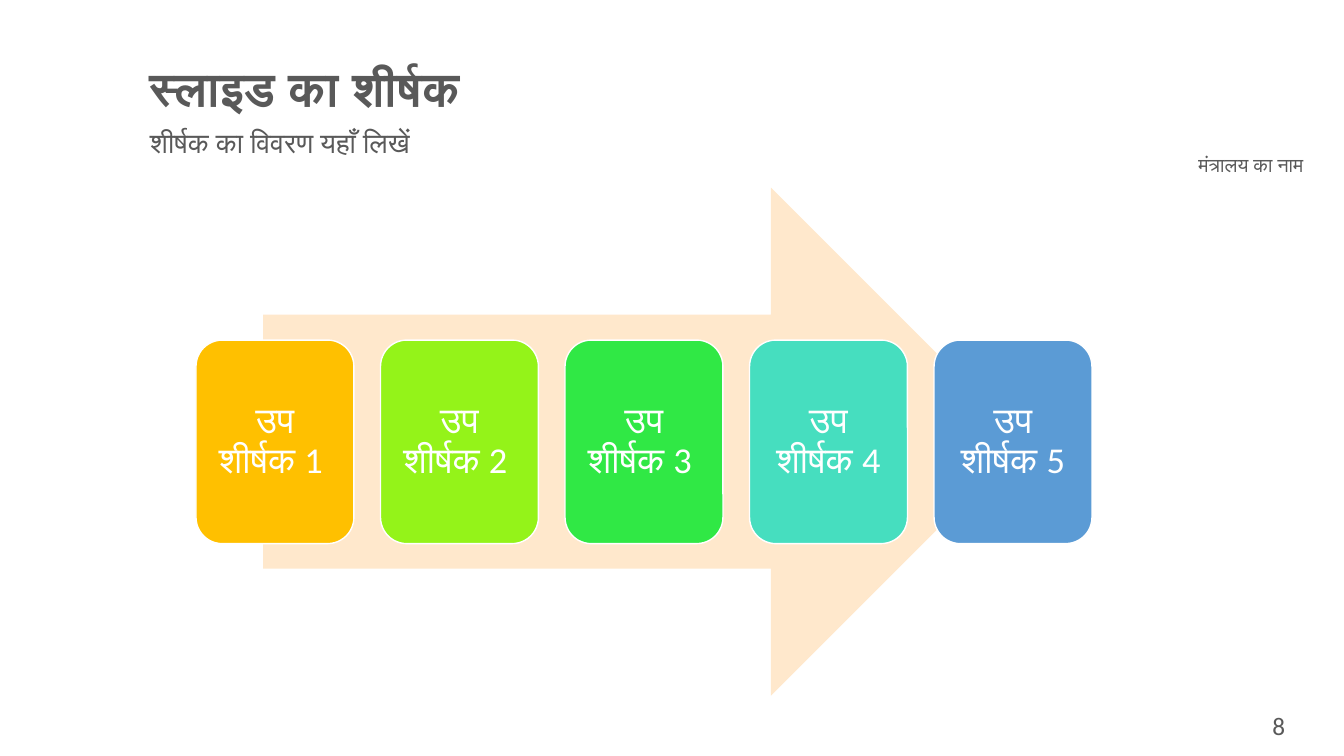
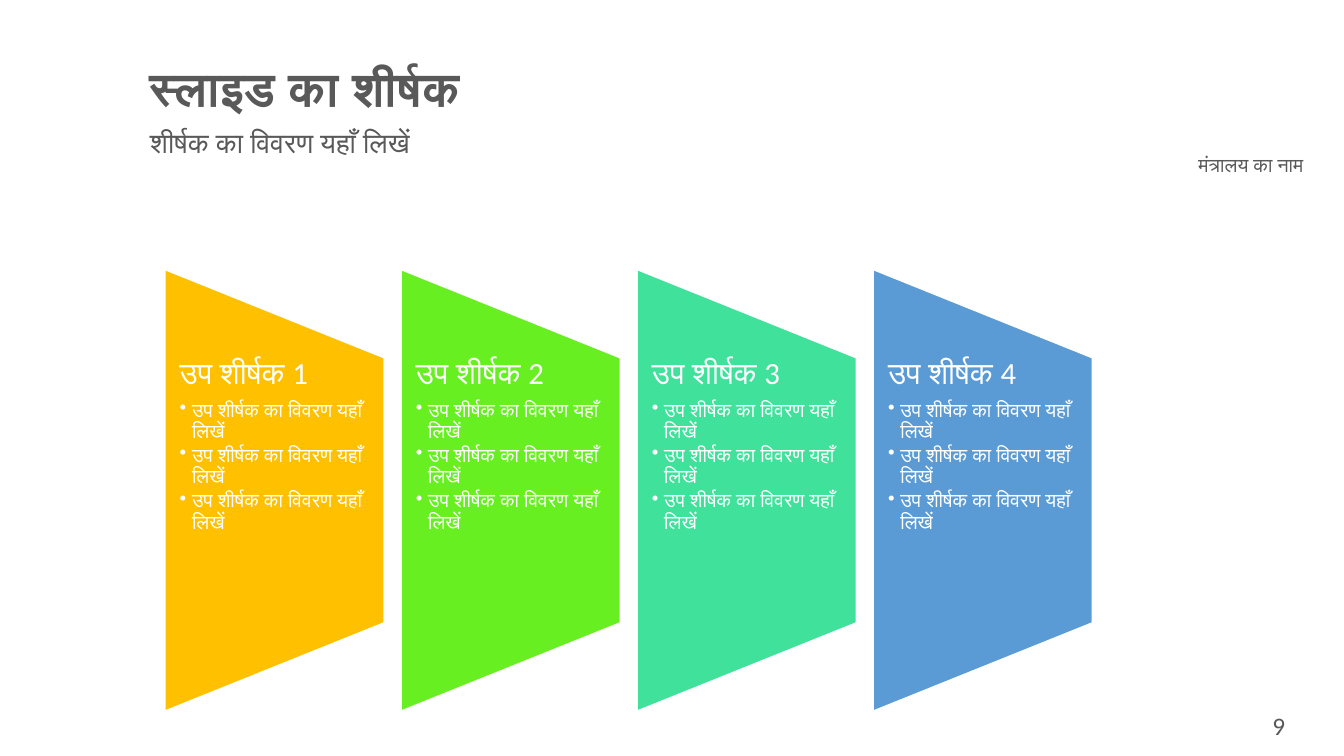
from pptx import Presentation
from pptx.dml.color import RGBColor
from pptx.enum.lang import MSO_LANGUAGE_ID
from pptx.enum.shapes import MSO_SHAPE
from pptx.enum.text import MSO_ANCHOR, MSO_AUTO_SIZE, PP_ALIGN
from pptx.oxml.xmlchemy import OxmlElement
from pptx.util import Cm, Pt

# Content
TITLE = "स्लाइड का शीर्षक"
SUBTITLE = "शीर्षक का विवरण यहाँ लिखें"
MINISTRY = "मंत्रालय का नाम"
STEPS = [
    ("उप शीर्षक 1 ", "amber"),
    ("उप शीर्षक 2 ", "lime"),
    ("उप शीर्षक 3 ", "green"),
    ("उप शीर्षक 4", "turquoise"),
    ("उप शीर्षक 5", "blue"),
]
POINTS = ["उप शीर्षक का विवरण यहाँ लिखें"] * 3
PANELS = [
    ("उप शीर्षक 1", "amber", POINTS),
    ("उप शीर्षक 2", "leaf", POINTS),
    ("उप शीर्षक 3", "mint", POINTS),
    ("उप शीर्षक 4", "blue", POINTS),
]

# Style
COLORS = {
    "text": "595959", "white": "FFFFFF", "arrow": "FFE8CC",
    "amber": "FFC000", "lime": "94F319", "green": "30E845",
    "turquoise": "46DEBF", "blue": "5B9BD5", "leaf": "67EF21", "mint": "3FE19B",
}
FORMATS = {
    "title": dict(size=Pt(34), bold=True, color="text"),
    "subtitle": dict(size=Pt(20), color="text"),
    "ministry": dict(size=Pt(14), color="text"),
    "number": dict(size=Pt(18), color="text"),
    "step": dict(size=Pt(26), color="white"),
    "heading": dict(size=Pt(22), color="white"),
    "point": dict(size=Pt(14), color="white"),
}
FONT = dict(name="Calibri", language_id=MSO_LANGUAGE_ID.HINDI)


def rgb(color):
    return RGBColor.from_string(COLORS[color])


def set_attrs(obj, **values):
    for name, value in values.items():
        setattr(obj, name, value)


def place(sp, left, top, width, height):
    set_attrs(sp, left=Cm(left), top=Cm(top), width=Cm(width), height=Cm(height))


def set_frame(tf, anchor=MSO_ANCHOR.TOP, side=0.25, top=0.13):
    set_attrs(tf, word_wrap=True, auto_size=MSO_AUTO_SIZE.NONE, vertical_anchor=anchor,
              margin_left=Cm(side), margin_right=Cm(side),
              margin_top=Cm(top), margin_bottom=Cm(top))


def set_bullet(p, char=None, indent=0):
    pPr = p._p.get_or_add_pPr()
    pPr.set("marL", str(Cm(indent)))
    pPr.set("indent", str(-Cm(indent)))
    bullet = OxmlElement("a:buChar" if char else "a:buNone")
    if char:
        bullet.set("char", char)
    pPr.append(bullet)


def write(p, text, style, align=PP_ALIGN.LEFT, spacing=0.9, after=0):
    set_attrs(p, alignment=align, line_spacing=spacing,
              space_before=Pt(0), space_after=Pt(after))
    r = p.add_run()
    r.text = text
    values = {**FONT, **FORMATS[style]}
    r.font.color.rgb = rgb(values.pop("color"))
    set_attrs(r.font, **values)


def add_text(s, box, text, style, align=PP_ALIGN.LEFT):
    tf = s.shapes.add_textbox(*map(Cm, box)).text_frame
    set_frame(tf)
    write(tf.paragraphs[0], text, style, align, spacing=1.0)


def add_block(s, kind, box, color, line=None):
    sp = s.shapes.add_shape(kind, *map(Cm, box))
    sp.shadow.inherit = False
    sp.fill.solid()
    sp.fill.fore_color.rgb = rgb(color)
    if line:
        sp.line.color.rgb = rgb("white")
        sp.line.width = Pt(line)
    else:
        sp.line.fill.background()
    return sp


# Shared parts: title, subtitle, ministry name, slide number
def add_slide(prs, number):
    s = prs.slides.add_slide(prs.slide_layouts[1])
    headers = [(TITLE, "title", 1.52, 1.4), (SUBTITLE, "subtitle", 3.12, 1.6)]
    for sp, (text, style, top, height) in zip(s.placeholders, headers):
        place(sp, 3.53, top, 24.4, height)
        set_frame(sp.text_frame)
        p = sp.text_frame.paragraphs[0]
        set_bullet(p)
        write(p, text, style)
    add_text(s, (29.95, 3.73, 3.9, 0.86), MINISTRY, "ministry")
    add_text(s, (30.73, 17.78, 3, 1.14), number, "number", PP_ALIGN.CENTER)
    return s


# Row of steps on a wide arrow
def add_steps(s):
    left, top, width, height, pitch = 4.94, 8.57, 3.98, 5.13, 4.65
    add_block(s, MSO_SHAPE.RIGHT_ARROW, (6.63, 4.73, 19.2, 12.8), "arrow")
    for i, (text, color) in enumerate(STEPS):
        box = (left + i * pitch, top, width, height)
        sp = add_block(s, MSO_SHAPE.ROUNDED_RECTANGLE, box, color, line=1)
        set_frame(sp.text_frame, MSO_ANCHOR.MIDDLE, side=0.28, top=0.28)
        write(sp.text_frame.paragraphs[0], text, "step", PP_ALIGN.CENTER)


# Row of tapering panels; each is a wide shape turned upright
def add_panels(s):
    left, top, width, height, pitch = 4.15, 6.78, 5.54, 11.15, 5.95
    turn = (height - width) / 2
    inset = height / 5
    for i, (heading, color, points) in enumerate(PANELS):
        x = left + i * pitch
        sp = add_block(s, MSO_SHAPE.FLOWCHART_MANUAL_OPERATION,
                       (x - turn, top + turn, height, width), color, line=1.5)
        sp.rotation = 270
        box = (x, top + inset, width, height - 2 * inset)
        tf = s.shapes.add_textbox(*map(Cm, box)).text_frame
        set_frame(tf, side=0.38, top=0)
        write(tf.paragraphs[0], heading, "heading", after=7)
        for point in points:
            p = tf.add_paragraph()
            p.level = 1
            set_bullet(p, "•", 0.31)
            write(p, point, "point", after=2)


def main():
    prs = Presentation()
    set_attrs(prs, slide_width=Cm(33.87), slide_height=Cm(19.05))
    add_steps(add_slide(prs, "8"))
    add_panels(add_slide(prs, "9"))
    prs.save("out.pptx")


if __name__ == "__main__":
    main()
